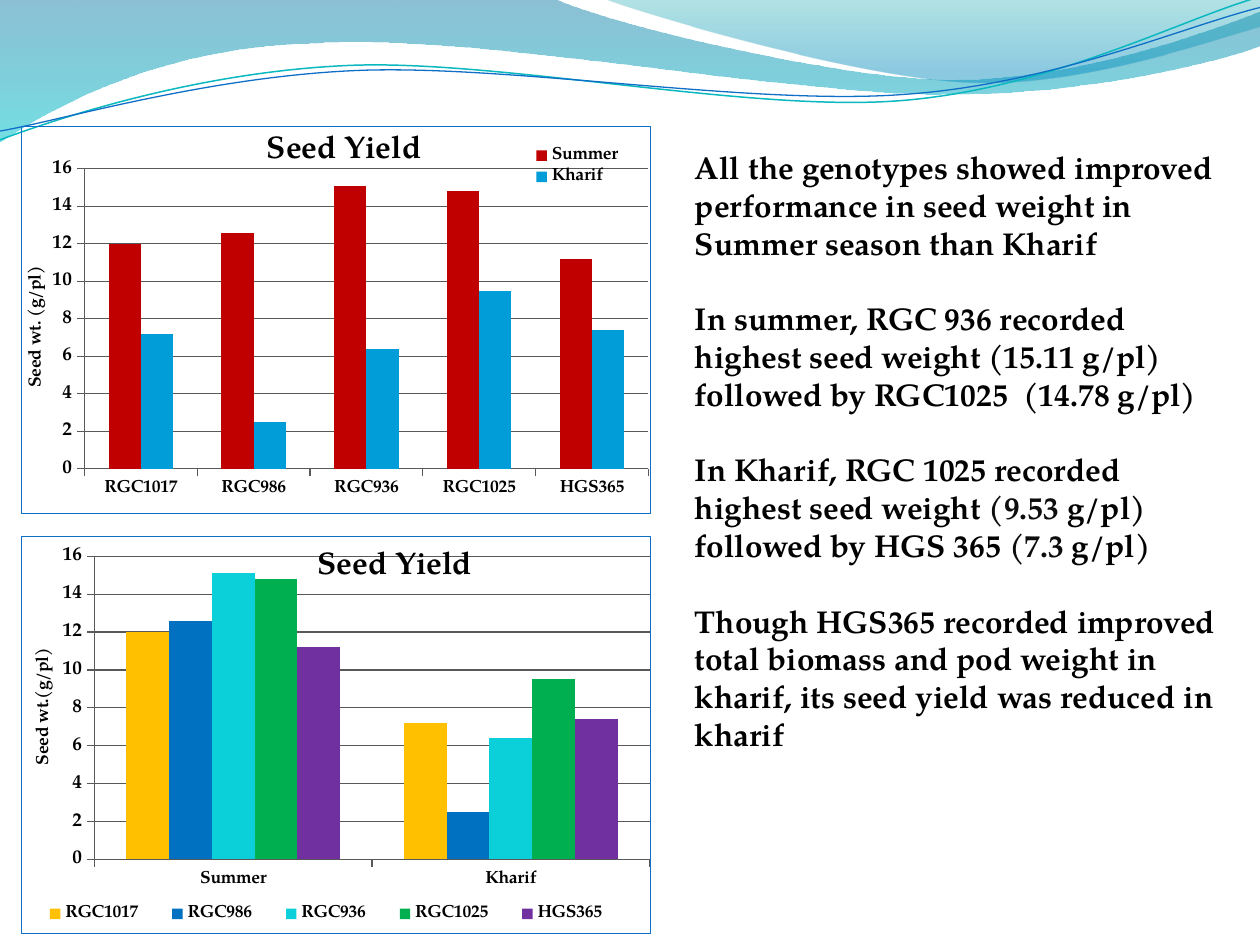
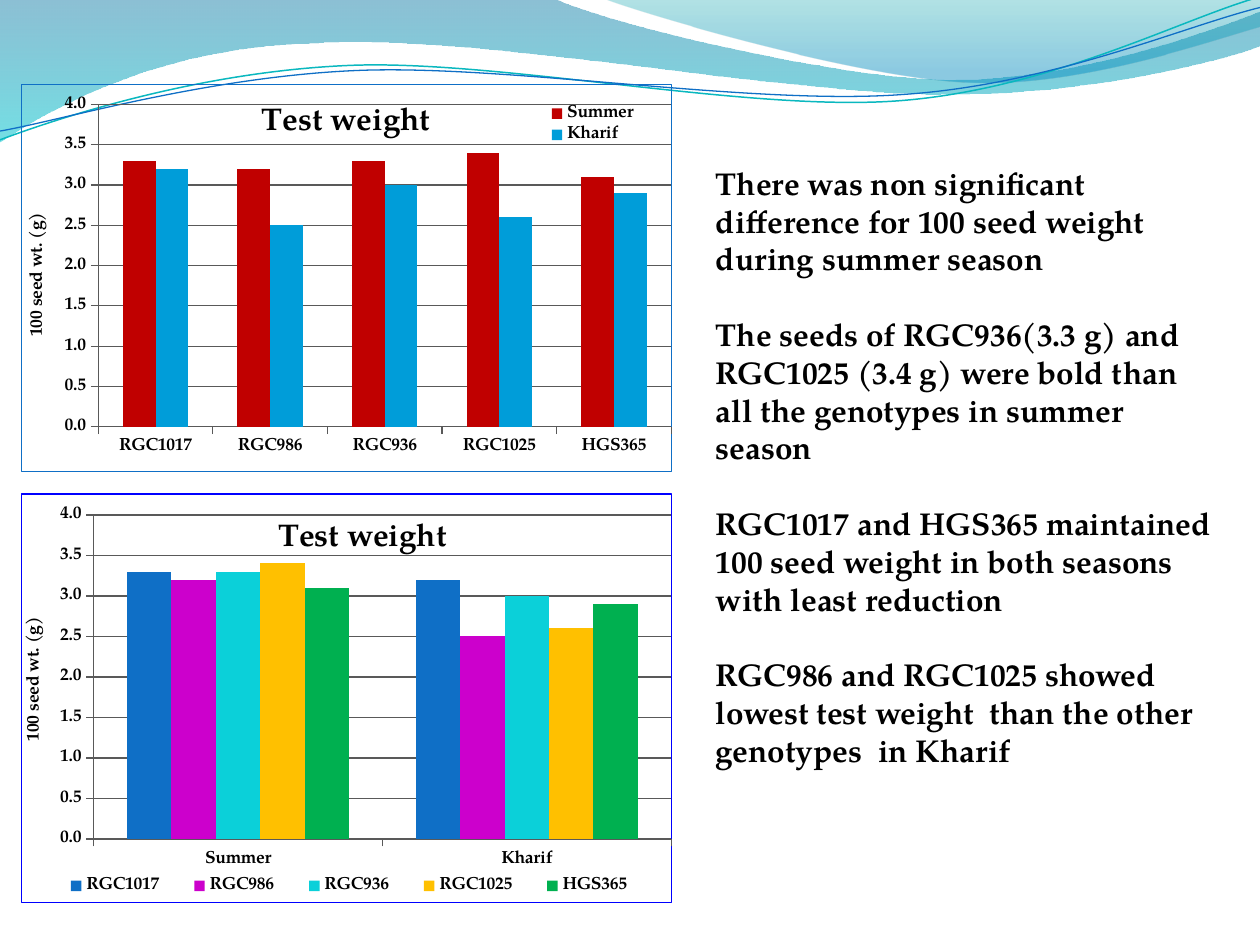
import math
from dataclasses import dataclass
from itertools import cycle
from typing import Any

import lxml.etree
import pptx
import pptx.chart.data
import pptx.dml.color
import pptx.enum.chart
import pptx.oxml.ns
import pptx.util

Pt = pptx.util.Pt
qn = pptx.oxml.ns.qn


# Theme: colours and type sizes
@dataclass(frozen=True)
class Theme:
    font: str = "TeX Gyre Pagella"
    text: str = "000000"
    soft_text: str = "0D0D0D"
    grid: str = "595959"
    blue: str = "0F6FC6"
    bright_blue: str = "0000FF"
    teal: str = "0AB8BF"
    red: str = "C00000"
    sky: str = "009DD9"
    amber: str = "FFC000"
    ocean: str = "0070C0"
    aqua: str = "0BD0D9"
    green: str = "00B050"
    purple: str = "7030A0"
    magenta: str = "CC00CC"
    heading_size: float = 18
    body_size: float = 18
    label_size: float = 10
    large_label_size: float = 11
    body_gap: float = 21.6
    hairline: float = 0.75


THEME = Theme()
GENOTYPES = ("RGC1017", "RGC986", "RGC936", "RGC1025", "HGS365")
SEASONS = ("Summer", "Kharif")
SEASON_COLOURS = (THEME.red, THEME.sky)
RIBBON_TILT = -2.7


@dataclass(frozen=True)
class Stop:
    position: float
    colour: str
    opacity: int


@dataclass(frozen=True)
class Wave:
    """An outline: a segment holds one point (line) or three (Bézier curve)."""
    start: tuple[float, float]
    segments: tuple[tuple[float, ...], ...]
    stops: tuple[Stop, ...] = ()
    line: str = ""
    line_width: float = 0
    centre: tuple[float, float] = (0, 0)
    tilt: float = 0


@dataclass(frozen=True)
class ChartPanel:
    """The plot, titles and legend are placed in percent of the chart."""
    box: tuple[float, float, float, float]
    by_genotype: bool
    colours: tuple[str, ...]
    border: str
    plot: tuple[float, ...]
    title: tuple[float, ...]
    axis_title: tuple[float, ...]
    legend: tuple[float, ...]
    axis_label: str


@dataclass(frozen=True)
class TraitSlide:
    trait: str
    values: tuple[tuple[float, ...], ...]
    maximum: float
    step: float
    number_format: str
    value_size: float
    panels: tuple[ChartPanel, ...]
    text_box: tuple[float, float, float, float]
    # Runs of a paragraph alternate between the text and soft text colours
    paragraphs: tuple[tuple[str, ...], ...]


# Shared header waves
WAVES = (
    Wave((0, 0), (
        (316.8, -0.7),
        (342.7, 12.2, 478.1, 45.4, 545.8, 45.4),
        (614.2, 45.4, 689.8, 18.7, 720, 6.5),
        (720.7, 25.9),
        (707.8, 31.7, 626.4, 54.7, 537.1, 54),
        (447.8, 54, 275, 20.2, 185, 24.5),
        (92.9, 25.9, 33.1, 59.8, -0.7, 81.4),
    ), stops=(Stop(0, "0074A1", 45), Stop(1, "00C6CF", 55))),
    Wave((344.9, -0.7), (
        (366.5, 7.9, 491, 44.6, 553.7, 46.8),
        (616.3, 49.7, 691.9, 23, 720, 15.1),
        (720, 0),
    ), stops=(Stop(0, "00A1A9", 30), Stop(0.8, "008BBF", 45))),
    Wave((0, 79.9), (
        (34.6, 67, 113.8, 41, 199.4, 37.4),
        (284.4, 33.8, 427, 64.1, 513.4, 57.6),
        (599.8, 51.1, 675.4, 10.8, 718.6, -1.4),
    ), line=THEME.teal, line_width=0.85, centre=(359.3, 41.4), tilt=RIBBON_TILT),
    Wave((0, 74.9), (
        (33.8, 69.1, 118.1, 43.9, 203.8, 40.3),
        (290.2, 36.7, 429.8, 60.5, 516.2, 54),
        (601.9, 48.2, 676.1, 15.1, 720, 4.3),
    ), line=THEME.blue, line_width=THEME.hairline, centre=(359.6, 42.5), tilt=RIBBON_TILT),
)

# Slide content
SLIDES = (
    TraitSlide(
        "Seed Yield",
        ((12, 12.6, 15.1, 14.8, 11.2), (7.2, 2.5, 6.4, 9.5, 7.4)),
        16, 2, "General", THEME.large_label_size,
        (
            ChartPanel((12, 72, 360, 222), False, SEASON_COLOURS, THEME.blue,
                       (10, 10.9, 89.7, 77.5), (38.1, 0), (0.3, 35.3),
                       (79.9, 4, 17, 12.5), "Seed wt. (g/pl)"),
            ChartPanel((12, 306, 360, 228), True,
                       (THEME.amber, THEME.ocean, THEME.aqua, THEME.green, THEME.purple),
                       THEME.blue, (11.6, 5.1, 88.3, 76.2), (46.2, 1.7), (1.5, 27.4),
                       (0, 92, 96.8, 6), "Seed wt.(g/pl)"),
        ),
        (390, 81, 312, 378),
        (
            ("All the genotypes showed improved performance in seed weight in "
             "Summer season than Kharif",),
            ("In summer, RGC 936 recorded highest seed weight (15.11 g/pl) "
             "followed by RGC1025  (14.78 g/pl)",),
            ("In Kharif, RGC 1025 recorded highest seed weight ", "(9.53 ",
             "g/pl) followed by HGS 365 ", "(7.3 ", "g/pl)"),
            ("Though HGS365 recorded improved total biomass and pod weight in "
             "kharif, its seed yield was reduced in kharif",),
        ),
    ),
    TraitSlide(
        "Test weight",
        ((3.3, 3.2, 3.3, 3.4, 3.1), (3.2, 2.5, 3, 2.6, 2.9)),
        4, 0.5, "#,##0.0", THEME.label_size,
        (
            ChartPanel((12, 48, 372, 222), False, SEASON_COLOURS, THEME.blue,
                       (11.8, 5.1, 88.2, 83.3), (36.1, 3.7), (0.5, 32.4),
                       (79.4, 4, 17, 12.5), "100 seed wt. (g)"),
            ChartPanel((12, 282, 372, 234), True,
                       (THEME.blue, THEME.magenta, THEME.aqua, THEME.amber, THEME.green),
                       THEME.bright_blue, (11.1, 5.1, 88.9, 79.4), (38.6, 5), (0, 29.5),
                       (3.1, 93, 94.6, 6), "100 seed wt. (g)"),
        ),
        (402, 90, 300, 356),
        (
            ("There was non significant difference for 100 seed weight during "
             "summer season",),
            ("The seeds of RGC936(3.3 g) and RGC1025 (3.4 g) were bold than all "
             "the genotypes in summer season",),
            ("RGC1017 and HGS365 maintained 100 seed weight in both seasons with "
             "least reduction",),
            ("RGC986 and RGC1025 showed lowest test weight  than the other "
             "genotypes  in Kharif",),
        ),
    ),
)


# Formatting helpers
def rgb(colour: str) -> pptx.dml.color.RGBColor:
    return pptx.dml.color.RGBColor.from_string(colour)


def set_values(target: Any, values: dict[str, Any]) -> None:
    for name, value in values.items():
        setattr(target, name, value)


def set_font(font: Any, size: float, colour: str = THEME.text, bold: bool = True) -> None:
    set_values(font, {"name": THEME.font, "size": Pt(size), "bold": bold})
    font.color.rgb = rgb(colour)


def set_line(line: Any, colour: str, width: float = THEME.hairline) -> None:
    line.color.rgb = rgb(colour)
    line.width = Pt(width)


def set_layout(element: Any, percents: tuple[float, ...], inner: bool = False) -> None:
    """Place a chart part by percents of the chart: x, y and maybe w, h."""
    for old_layout in element.findall(qn("c:layout")):
        element.remove(old_layout)
    layout = lxml.etree.Element(qn("c:layout"))
    manual = lxml.etree.SubElement(layout, qn("c:manualLayout"))
    entries = [("layoutTarget", "inner")] if inner else []
    entries += [("xMode", "edge"), ("yMode", "edge")]
    entries += [(tag, f"{percent / 100:.3f}") for tag, percent in zip("xywh", percents)]
    for tag, value in entries:
        lxml.etree.SubElement(manual, qn(f"c:{tag}")).set("val", value)
    overlay = element.find(qn("c:overlay"))
    element.insert(0 if overlay is None else element.index(overlay), layout)


def set_title(title: Any, text: str, size: float, place: tuple[float, ...]) -> None:
    title.text_frame.text = text
    set_font(title.text_frame.paragraphs[0].runs[0].font, size)
    set_layout(title._element, place)


# Drawing
def untilted_points(wave: Wave) -> list[tuple[int, int]]:
    """All points of the outline, turned back by the tilt of its shape."""
    numbers = [number for part in (wave.start, *wave.segments) for number in part]
    cosine, sine = (turn(math.radians(-wave.tilt)) for turn in (math.cos, math.sin))
    centre_x, centre_y = wave.centre
    points = []
    for x, y in zip(numbers[::2], numbers[1::2]):
        x, y = x - centre_x, y - centre_y
        points.append((Pt(centre_x + x * cosine - y * sine),
                       Pt(centre_y + x * sine + y * cosine)))
    return points


def bend_segments(shape: Any, wave: Wave) -> None:
    """Join the three points of each curved segment into one Bézier curve."""
    lines = iter(list(shape._element.iter(qn("a:lnTo"))))
    for segment in wave.segments:
        first, *others = [next(lines) for _ in range(len(segment) // 2)]
        if others:
            first.tag = qn("a:cubicBezTo")
        for line in others:
            first.append(line[0])
            line.getparent().remove(line)


def draw_wave(slide: Any, wave: Wave) -> None:
    start, *others = untilted_points(wave)
    builder = slide.shapes.build_freeform(*start)
    builder.add_line_segments(others, close=bool(wave.stops))
    shape = builder.convert_to_shape()
    bend_segments(shape, wave)
    shape.rotation = wave.tilt
    shape.shadow.inherit = False
    if not wave.stops:
        shape.fill.background()
        set_line(shape.line, wave.line, wave.line_width)
        return
    shape.line.fill.background()
    shape.fill.gradient()
    shape.fill.gradient_angle = 270
    for target, stop in zip(shape.fill.gradient_stops, wave.stops):
        target.position = stop.position
        target.color.rgb = rgb(stop.colour)
    for colour, stop in zip(shape._element.spPr.iter(qn("a:srgbClr")), wave.stops):
        lxml.etree.SubElement(colour, qn("a:alpha")).set("val", str(stop.opacity * 1000))


def draw_border(chart: Any, colour: str) -> None:
    properties = lxml.etree.Element(qn("c:spPr"))
    lxml.etree.SubElement(properties, qn("a:noFill"))
    line = lxml.etree.SubElement(properties, qn("a:ln"), w=str(Pt(THEME.hairline)))
    fill = lxml.etree.SubElement(line, qn("a:solidFill"))
    lxml.etree.SubElement(fill, qn("a:srgbClr"), val=colour)
    chart._chartSpace.find(qn("c:chart")).addnext(properties)


def draw_chart(slide: Any, content: TraitSlide, panel: ChartPanel) -> None:
    data = pptx.chart.data.CategoryChartData(number_format=content.number_format)
    names, data.categories, rows = (
        (GENOTYPES, SEASONS, zip(*content.values)) if panel.by_genotype
        else (SEASONS, GENOTYPES, content.values))
    for name, row in zip(names, rows):
        data.add_series(name, row)
    chart = slide.shapes.add_chart(pptx.enum.chart.XL_CHART_TYPE.COLUMN_CLUSTERED,
                                   *map(Pt, panel.box), data).chart
    set_font(chart.font, THEME.label_size, bold=False)
    draw_border(chart, panel.border)
    # Columns
    plot = chart.plots[0]
    set_values(plot, {"gap_width": 150, "overlap": 0, "vary_by_categories": False})
    for series, colour in zip(plot.series, panel.colours):
        series.format.fill.solid()
        series.format.fill.fore_color.rgb = rgb(colour)
    set_layout(chart._chartSpace.find(".//" + qn("c:plotArea")), panel.plot, inner=True)
    # Axes
    for axis, size in ((chart.category_axis, THEME.label_size),
                       (chart.value_axis, content.value_size)):
        axis.major_tick_mark = pptx.enum.chart.XL_TICK_MARK.OUTSIDE
        set_font(axis.tick_labels.font, size)
        set_line(axis.format.line, THEME.grid)
    set_values(chart.value_axis, {"minimum_scale": 0, "maximum_scale": content.maximum,
                                  "major_unit": content.step, "has_major_gridlines": True})
    set_line(chart.value_axis.major_gridlines.format.line, THEME.grid)
    set_values(chart.value_axis.tick_labels, {"number_format": content.number_format,
                                              "number_format_is_linked": False})
    axis_title = chart.value_axis.axis_title
    set_title(axis_title, panel.axis_label, THEME.label_size, panel.axis_title)
    axis_title._element.find(".//" + qn("a:bodyPr")).set("rot", "-5400000")
    # Title and legend
    set_title(chart.chart_title, content.trait, THEME.heading_size, panel.title)
    chart.chart_title._element.find(qn("c:overlay")).set("val", "1")
    chart.has_legend = True
    set_values(chart.legend, {"position": pptx.enum.chart.XL_LEGEND_POSITION.RIGHT,
                              "include_in_layout": False})
    set_font(chart.legend.font, THEME.label_size)
    set_layout(chart.legend._element, panel.legend)


def draw_findings(slide: Any, content: TraitSlide) -> None:
    frame = slide.shapes.add_textbox(*map(Pt, content.text_box)).text_frame
    frame.word_wrap = True
    for index, texts in enumerate(content.paragraphs):
        paragraph = frame.add_paragraph() if index else frame.paragraphs[0]
        paragraph.space_before = Pt(THEME.body_gap if index else 0)
        for text, colour in zip(texts, cycle((THEME.text, THEME.soft_text))):
            run = paragraph.add_run()
            run.text = text
            set_font(run.font, THEME.body_size, colour)


def main() -> None:
    presentation = pptx.Presentation()
    set_values(presentation, {"slide_width": Pt(720), "slide_height": Pt(540)})
    for content in SLIDES:
        slide = presentation.slides.add_slide(presentation.slide_layouts[6])
        for wave in WAVES:
            draw_wave(slide, wave)
        for panel in content.panels:
            draw_chart(slide, content, panel)
        draw_findings(slide, content)
    presentation.save("out.pptx")


if __name__ == "__main__":
    main()
